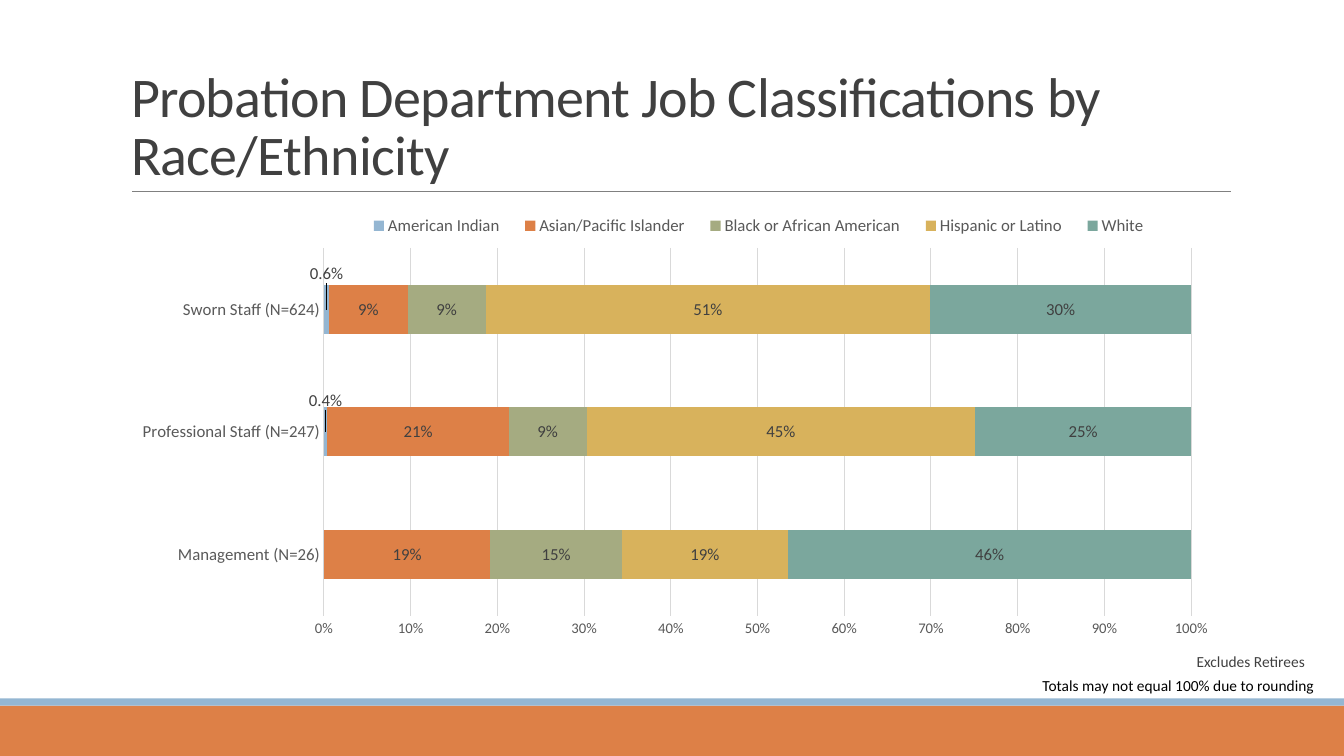
import pptx
import pptx.chart.data
import pptx.dml.color
import pptx.enum.chart
import pptx.enum.shapes
import pptx.enum.text
import pptx.oxml
import pptx.oxml.ns
import pptx.util
from pptx.util import Inches

FONT = "Calibri"
DARK, GREY, PALE = "404040", "595959", "D9D9D9"
BLUE, ORANGE = "94B6D2", "DD8047"

GROUPS = ["Management (N=26)", "Professional Staff (N=247)", "Sworn Staff (N=624)"]
SERIES = [
    ("American Indian", (0, 0.004, 0.006), BLUE),
    ("Asian/Pacific Islander", (0.19, 0.21, 0.09), ORANGE),
    ("Black or African American", (0.15, 0.09, 0.09), "A5AB81"),
    ("Hispanic or Latino", (0.19, 0.45, 0.51), "D8B25C"),
    ("White", (0.46, 0.25, 0.3), "7BA79D"),
]
RAISED = {1: -0.07, 2: -0.08}  # group index: label shift, share of chart height


def color(code):
    return pptx.dml.color.RGBColor.from_string(code)


def style(font, size, code):
    font.name = FONT
    font.size = pptx.util.Pt(size)
    font.color.rgb = color(code)


def write(frame, text, size=11, code=DARK, space=None, spc=None, anchor=None):
    frame.word_wrap = True
    if anchor is not None:
        frame.vertical_anchor = anchor
    para = frame.paragraphs[0]
    para.alignment = pptx.enum.text.PP_ALIGN.LEFT
    if space:
        para.line_spacing = space
    run = para.add_run()
    run.text = text
    style(run.font, size, code)
    if spc:
        run.font._element.set("spc", str(spc))


def layout(parent, index, target=None, **parts):
    """Give a chart part a manual layout, in shares of the chart."""
    for old in parent.findall(pptx.oxml.ns.qn("c:layout")):
        parent.remove(old)
    body = f'<c:layoutTarget val="{target}"/>' if target else ""
    if "w" in parts:
        body += '<c:xMode val="edge"/><c:yMode val="edge"/>'
    body += "".join(f'<c:{key} val="{val}"/>' for key, val in parts.items())
    space = pptx.oxml.ns.nsdecls("c")
    parent.insert(index, pptx.oxml.parse_xml(
        f"<c:layout {space}><c:manualLayout>{body}</c:manualLayout></c:layout>"))


class Deck:
    def __init__(self):
        self.show = pptx.Presentation()
        self.show.slide_width = Inches(13.33)
        self.show.slide_height = Inches(7.5)
        self.slide = self.show.slides.add_slide(self.show.slide_layouts[5])

    def band(self, top, height, code):
        kind = pptx.enum.shapes.MSO_SHAPE.RECTANGLE
        shape = self.slide.shapes.add_shape(
            kind, 0, Inches(top), self.show.slide_width, Inches(height))
        shape.shadow.inherit = False
        shape.fill.solid()
        shape.fill.fore_color.rgb = color(code)
        shape.line.fill.background()

    def rule(self, left, right, top):
        kind = pptx.enum.shapes.MSO_CONNECTOR.STRAIGHT
        line = self.slide.shapes.add_connector(
            kind, Inches(left), Inches(top), Inches(right), Inches(top))
        line.line.color.rgb = color("808080")
        line.line.width = pptx.util.Pt(0.5)
        space = pptx.oxml.ns.nsdecls("a")
        line._element.spPr.append(pptx.oxml.parse_xml(f"<a:effectLst {space}/>"))

    def title(self, text, left, top, width, height):
        shape = self.slide.shapes.title
        shape.left, shape.top = Inches(left), Inches(top)
        shape.width, shape.height = Inches(width), Inches(height)
        write(shape.text_frame, text, size=40, space=0.85, spc=-50,
              anchor=pptx.enum.text.MSO_ANCHOR.BOTTOM)

    def note(self, text, left, top, width, code):
        box = self.slide.shapes.add_textbox(
            Inches(left), Inches(top), Inches(width), Inches(0.29))
        write(box.text_frame, text, code=code)

    def chart(self, left, top, width, height):
        data = pptx.chart.data.CategoryChartData(number_format="0%")
        data.categories = GROUPS
        for name, vals, _ in SERIES:
            data.add_series(name, vals)
        chart = self.slide.shapes.add_chart(
            pptx.enum.chart.XL_CHART_TYPE.BAR_STACKED_100,
            Inches(left), Inches(top), Inches(width), Inches(height), data).chart
        style(chart.font, 10, "000000")
        chart.has_title = False
        plot = chart.plots[0]
        plot.vary_by_categories = False
        plot.gap_width, plot.overlap = 150, 100
        layout(chart._chartSpace.chart.plotArea, 0, "inner",
               x=0.183, y=0.1, w=0.782, h=0.83)
        self.axes(chart)
        self.legend(chart)
        for bars, (_, _, code) in zip(plot.series, SERIES):
            bars.format.fill.solid()
            bars.format.fill.fore_color.rgb = color(code)
            self.labels(bars.data_labels, "0%")
        self.lift(plot.series[0])

    def axes(self, chart):
        cat, val = chart.category_axis, chart.value_axis
        for axis, size in ((cat, 12), (val, 10.5)):
            axis.major_tick_mark = pptx.enum.chart.XL_TICK_MARK.NONE
            axis.minor_tick_mark = pptx.enum.chart.XL_TICK_MARK.NONE
            style(axis.tick_labels.font, size, GREY)
        cat.has_major_gridlines = False
        val.has_major_gridlines = True
        for line in (cat.format.line, val.major_gridlines.format.line):
            line.color.rgb = color(PALE)
            line.width = pptx.util.Pt(0.75)
        val.format.line.fill.background()
        val.minimum_scale, val.maximum_scale, val.major_unit = 0, 1, 0.1
        val.tick_labels.number_format = "0%"
        val.tick_labels.number_format_is_linked = False

    def legend(self, chart):
        chart.has_legend = True
        legend = chart.legend
        legend.position = pptx.enum.chart.XL_LEGEND_POSITION.TOP
        legend.include_in_layout = False
        style(legend.font, 12, GREY)
        layout(legend._element, 1, x=0.21, y=0.02, w=0.73, h=0.06)

    def labels(self, labels, form):
        labels.show_value = True
        labels.number_format = form
        labels.number_format_is_linked = False
        labels.position = pptx.enum.chart.XL_LABEL_POSITION.CENTER
        style(labels.font, 12, DARK)

    def lift(self, bars):
        """Raise the labels of the thin bars; the format hides zero."""
        form = "0.0%;;"
        self.labels(bars.data_labels, form)
        space = pptx.oxml.ns.nsdecls("c")
        for index, shift in RAISED.items():
            label = bars.points[index].data_label
            style(label.font, 12, DARK)
            label.position = pptx.enum.chart.XL_LABEL_POSITION.CENTER
            item = bars.data_labels._element.findall(pptx.oxml.ns.qn("c:dLbl"))[-1]
            layout(item, 1, x=0, y=shift)
            item.insert(2, pptx.oxml.parse_xml(
                f'<c:numFmt {space} formatCode="{form}" sourceLinked="0"/>'))


def main():
    deck = Deck()
    # Footer bands and title rule
    deck.band(7, 0.5, ORANGE)
    deck.band(6.93, 0.07, BLUE)
    deck.rule(1.31, 12.21, 1.9)
    # Title and chart
    deck.title("Probation Department Job Classifications by Race/Ethnicity",
               1.2, 0.31, 11, 1.59)
    deck.chart(1.2, 2.02, 11, 4.4)
    # Notes
    deck.note("Totals may not equal 100% due to rounding", 10.24, 6.66, 3.01, "000000")
    deck.note("Excludes Retirees", 11.77, 6.42, 1.5, DARK)
    deck.show.save("out.pptx")


if __name__ == "__main__":
    main()
